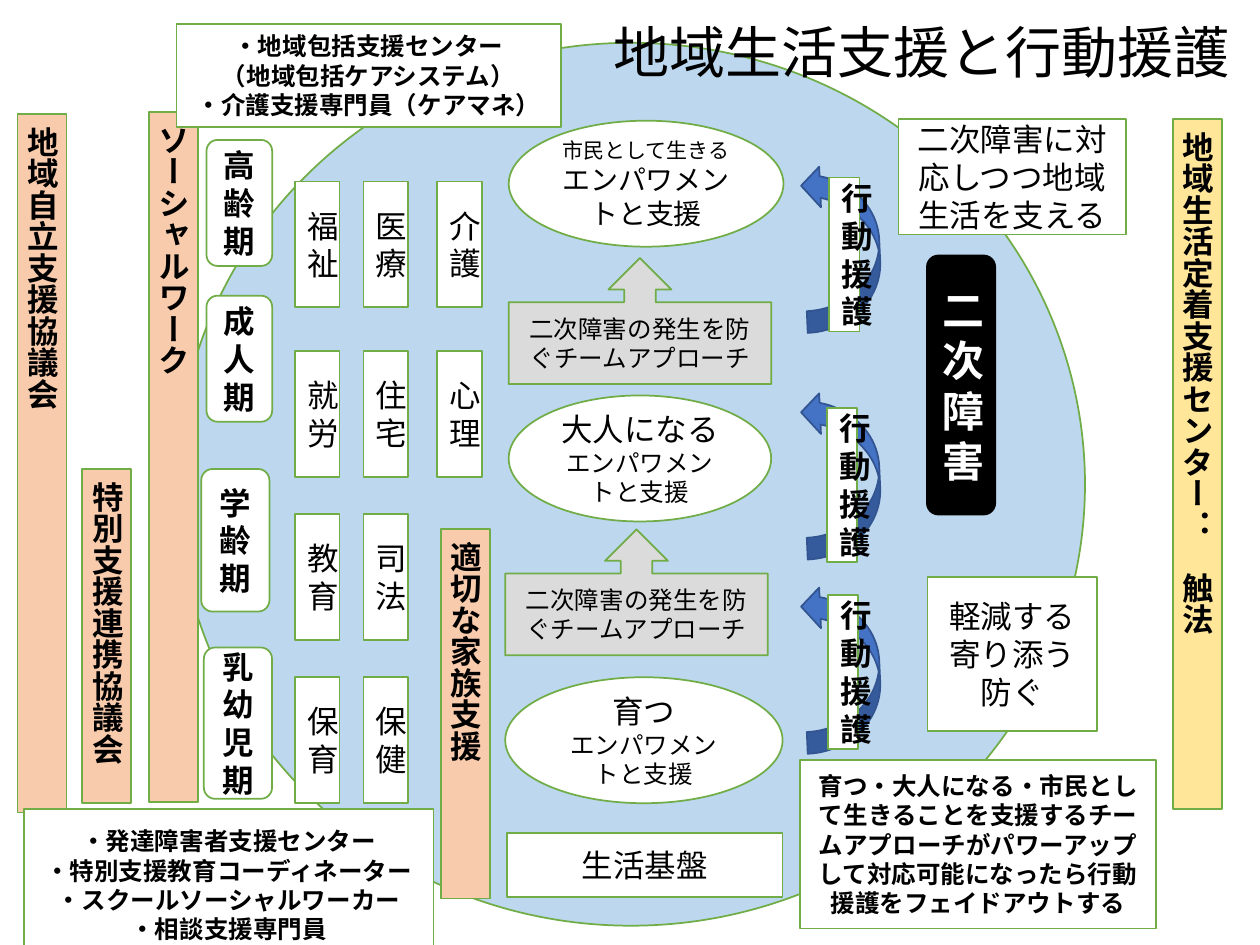
"""Build a one-slide overview of community living support and behaviour support."""
from dataclasses import dataclass

import pptx
import pptx.dml.color
import pptx.enum.shapes
import pptx.enum.text
import pptx.util

Pt = pptx.util.Pt
SHAPE = pptx.enum.shapes.MSO_SHAPE


@dataclass(frozen=True)
class Theme:
    """Hold the colours, font and type sizes of the slide."""
    font: str = "Calibri"
    ink: str = "000000"
    paper: str = "FFFFFF"
    edge: str = "70AD47"
    circle: str = "BDD7EE"
    bar: str = "F8CBAD"
    centre_bar: str = "FFE699"
    callout: str = "DBDBDB"
    arrow: str = "4472C4"
    arrow_edge: str = "325491"
    title: int = 32
    alert: int = 24
    body: int = 18
    medium: int = 16
    small: int = 14
    tiny: int = 12


T = Theme()


def rgb(value):
    """Turn a hex string into a colour."""
    return pptx.dml.color.RGBColor.from_string(value)


def style(p, size, bold=False, color=T.ink):
    """Set the font of a paragraph."""
    p.font.name = T.font
    p.font.size = Pt(size)
    p.font.bold = bold
    p.font.color.rgb = rgb(color)


def add_box(slide, kind, box, lines=(), size=T.body, bold=False,
            fill=T.paper, line=T.edge, color=T.ink):
    """Add a filled shape with centred lines, each a string or a (string, size) pair."""
    sp = slide.shapes.add_shape(kind, *map(Pt, box))
    sp.shadow.inherit = False
    sp.fill.solid()
    sp.fill.fore_color.rgb = rgb(fill)
    sp.line.color.rgb = rgb(line)
    sp.line.width = Pt(1)
    tf = sp.text_frame
    tf.vertical_anchor = pptx.enum.text.MSO_ANCHOR.MIDDLE
    for i, item in enumerate(lines):
        text, points = (item, size) if isinstance(item, str) else item
        p = tf.add_paragraph() if i else tf.paragraphs[0]
        p.text = text
        p.alignment = pptx.enum.text.PP_ALIGN.CENTER
        style(p, points, bold, color)
    return sp


def add_title(slide, box, text):
    """Place the slide title."""
    tf = slide.shapes.add_textbox(*map(Pt, box)).text_frame
    tf.word_wrap = True
    tf.vertical_anchor = pptx.enum.text.MSO_ANCHOR.MIDDLE
    p = tf.paragraphs[0]
    p.text = text
    p.line_spacing = 0.9
    style(p, T.title)


def add_bar(slide, box, text, fill=T.bar):
    """Place a tall bar with vertical text."""
    sp = add_box(slide, SHAPE.RECTANGLE, box, [text], bold=True, fill=fill)
    sp.text_frame._txBody.bodyPr.set("vert", "eaVert")


def add_stages(slide, box):
    """Stack the life stages from old age down to infancy."""
    x, y, w, h = box
    stages = [("高齢期", 3, 0, 37.5, 72), ("成人期", 3, 89, 37.5, 72),
              ("学齢期", 0, 188, 39, 81.5), ("乳幼児期", 1.5, 290, 39, 86.5)]
    for text, dx, dy, width, height in stages:
        add_box(slide, SHAPE.ROUNDED_RECTANGLE, (x + dx, y + dy, width, height),
                [text], bold=True)


def add_services(slide, box):
    """Lay out the service fields in rows and columns."""
    x, y, w, h = box
    cell_w, cell_h = 25.4, 72
    columns = (0, 39, w - cell_w)
    rows = [(0, ("福祉", "医療", "介護")), (97, ("就労", "住宅", "心理")),
            (190, ("教育", "司法")), (h - cell_h, ("保育", "保健"))]
    for dy, names in rows:
        for dx, name in zip(columns, names):
            add_box(slide, SHAPE.RECTANGLE, (x + dx, y + dy, cell_w, cell_h), [name])


def add_goals(slide, box):
    """Build the central column of goals, linked by team approach callouts."""
    x, y, w, h = box
    support = "エンパワメントと支援"
    goals = [(2, 0, 157, ("市民として生きる", T.tiny), (support, T.medium)),
             (2, 157, 150, ("大人になる", T.body), (support, T.small)),
             (0, 318, w, ("育つ", T.body), (support, T.small))]
    for dx, dy, width, *lines in goals:
        add_box(slide, SHAPE.OVAL, (x + dx, y + dy, width, 72), lines)
    for dx, dy in ((2, 78.5), (0, 233.5)):
        add_box(slide, SHAPE.UP_ARROW_CALLOUT, (x + dx, y + dy, 150, 72),
                ["二次障害の発生を防ぐチームアプローチ"], T.small, fill=T.callout)
    add_box(slide, SHAPE.RECTANGLE, (x + 1, y + h - 36.5, w - 1, 36.5), ["生活基盤"])


def add_behaviour_support(slide, box, label_x, label_y):
    """Place a curved arrow with its label at an offset inside the box."""
    x, y, w, h = box
    sp = add_box(slide, SHAPE.CURVED_RIGHT_ARROW, box, fill=T.arrow, line=T.arrow_edge)
    sp.rotation = 177.4
    for i, value in enumerate((0.288, 0.538, 0.25)):
        sp.adjustments[i] = value
    add_box(slide, SHAPE.RECTANGLE, (x + label_x, y + label_y, 17.3, 88),
            ["行動援護"], bold=True)


def add_note(slide, box, lines, size=T.body, bold=False):
    """Place a framed note."""
    add_box(slide, SHAPE.RECTANGLE, box, lines, size, bold)


def add_secondary_disability(slide, box):
    """Place the dark panel for secondary disability."""
    add_box(slide, SHAPE.ROUNDED_RECTANGLE, box, ["二次障害"], T.alert, True,
            T.ink, T.ink, T.paper)


def main():
    """Assemble the slide and save it."""
    prs = pptx.Presentation()
    prs.slide_width, prs.slide_height = Pt(720), Pt(540)
    s = prs.slides.add_slide(prs.slide_layouts[6])

    add_box(s, SHAPE.OVAL, (101, 24.5, 519, 504.5), fill=T.circle)
    add_title(s, (343.5, 8, 373, 47), "地域生活支援と行動援護")
    add_stages(s, (115, 80, 41, 376.5))
    add_services(s, (168.7, 103.7, 106.6, 355.3))
    add_goals(s, (288.7, 69, 158.5, 443.7))
    for y, label_x, label_y in ((93.5, 14.5, 8), (223, 13, 10), (334, 13.8, 6)):
        add_behaviour_support(s, (459.4, y, 43.2, 95.8), label_x, label_y)

    add_bar(s, (85, 64, 28, 394.5), "ソーシャルワーク")
    add_bar(s, (10, 65.3, 28, 399), "地域自立支援協議会")
    add_bar(s, (252, 302.5, 28, 211), "適切な家族支援")
    add_bar(s, (47, 268, 28, 190.8), "特別支援連携協議会")
    add_bar(s, (670.3, 68, 28, 394.5), "地域生活定着支援センター：　触法", T.centre_bar)

    add_secondary_disability(s, (529.7, 146, 39, 148))
    add_note(s, (513.4, 68, 130, 66), ["二次障害に対応しつつ地域生活を支える"])
    add_note(s, (530, 329.8, 97, 87.8), ["軽減する", "寄り添う", "防ぐ"])
    add_note(s, (457, 434.2, 203.8, 96.5),
             ["育つ・大人になる・市民として生きることを支援するチームアプローチが"
              "パワーアップして対応可能になったら行動援護をフェイドアウトする"],
             T.small, True)
    add_note(s, (13.7, 462.2, 234, 87),
             ["・発達障害者支援センター", "・特別支援教育コーディネーター",
              "・スクールソーシャルワーカー", "・相談支援専門員"], T.small, True)
    add_note(s, (100.8, 13.7, 219.6, 59),
             ["・地域包括支援センター", "（地域包括ケアシステム）",
              "・介護支援専門員（ケアマネ）"], T.small, True)
    prs.save("out.pptx")


if __name__ == "__main__":
    main()
